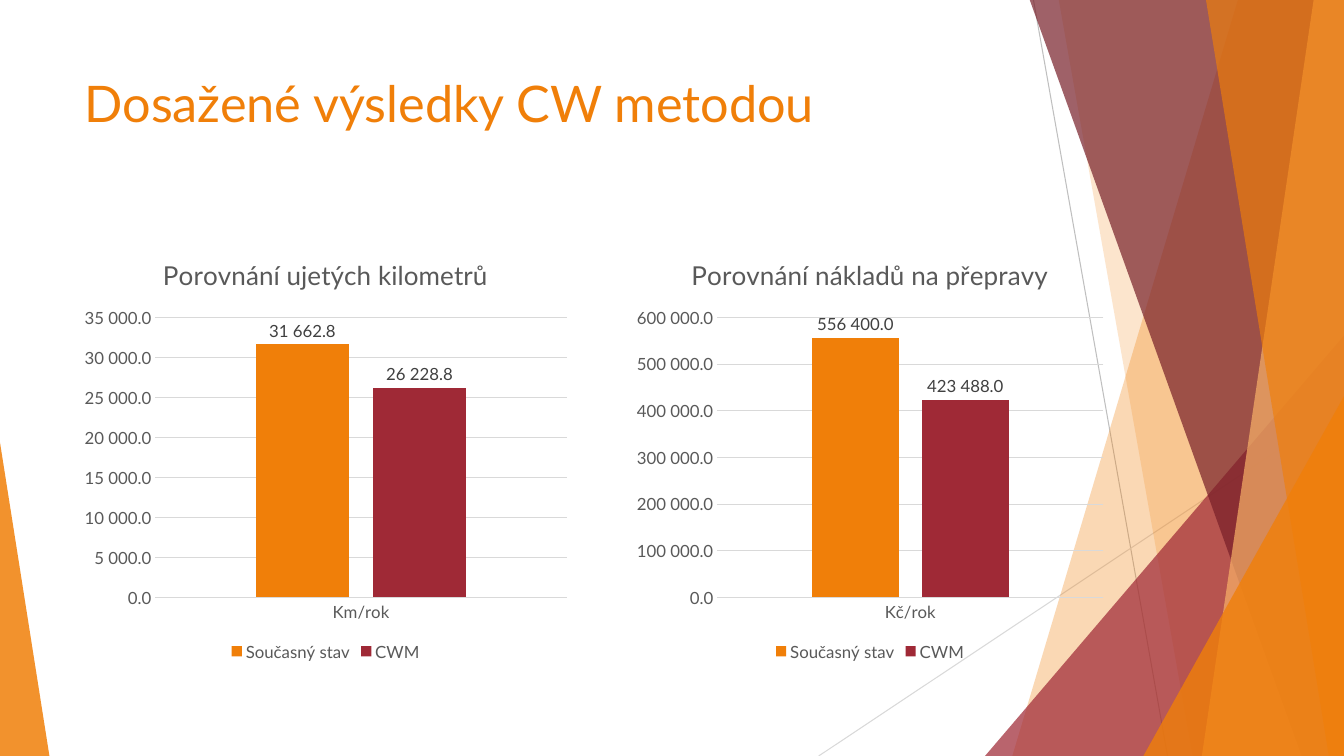
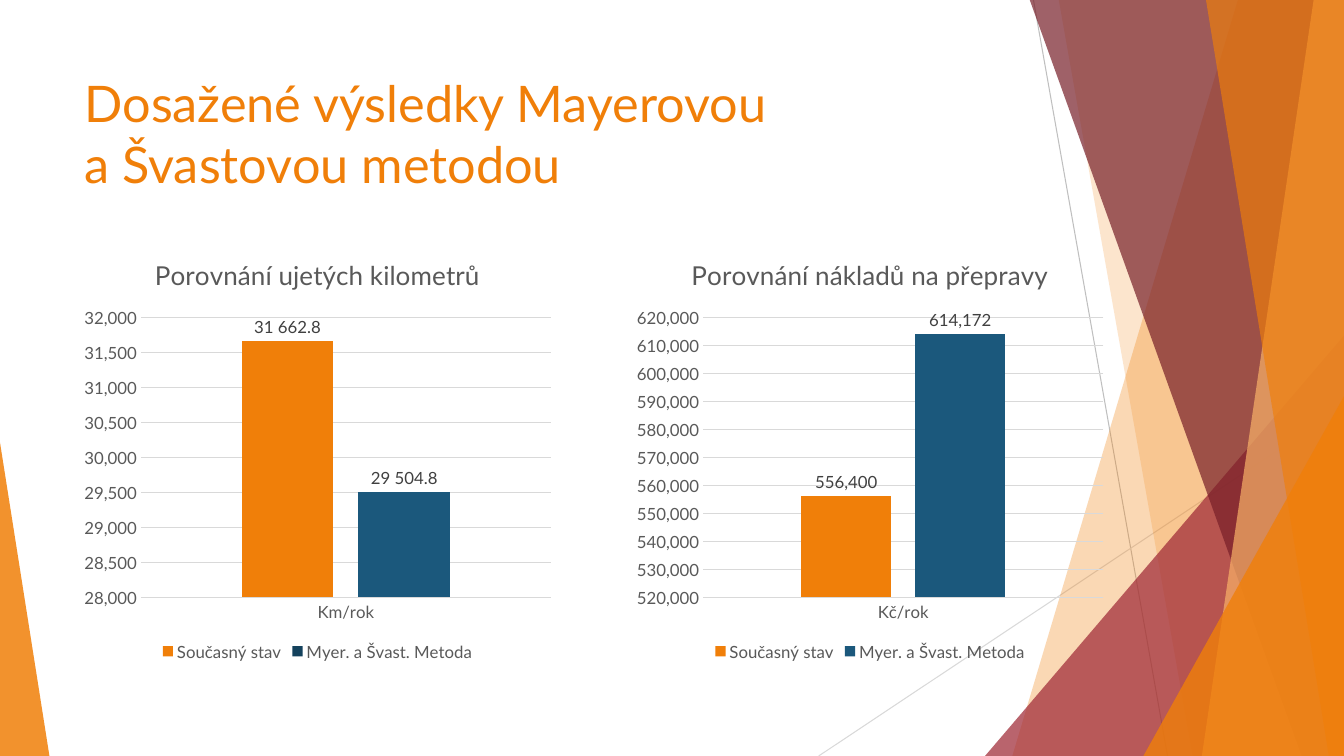
from lxml import etree
from pptx import Presentation
from pptx.chart.data import CategoryChartData
from pptx.dml.color import RGBColor
from pptx.enum.chart import XL_CHART_TYPE, XL_LABEL_POSITION, XL_LEGEND_POSITION, XL_TICK_MARK
from pptx.enum.shapes import MSO_CONNECTOR, MSO_SHAPE
from pptx.enum.text import MSO_ANCHOR
from pptx.oxml.ns import qn
from pptx.util import Inches, Pt

COLUMN_CLUSTERED = XL_CHART_TYPE.COLUMN_CLUSTERED
OUTSIDE_END = XL_LABEL_POSITION.OUTSIDE_END
LEGEND_BOTTOM = XL_LEGEND_POSITION.BOTTOM
NO_TICK = XL_TICK_MARK.NONE
STRAIGHT = MSO_CONNECTOR.STRAIGHT
TRIANGLE = MSO_SHAPE.ISOSCELES_TRIANGLE
ANCHOR_TOP = MSO_ANCHOR.TOP

ORANGE = RGBColor(0xF0, 0x7F, 0x09)
PALE_ORANGE = RGBColor(0xF9, 0xB2, 0x68)
RED = RGBColor(0x9F, 0x29, 0x36)
DARK_RED = RGBColor(0x77, 0x1F, 0x28)
BLUE = RGBColor(0x1B, 0x58, 0x7C)
DARK_BLUE = RGBColor(0x14, 0x42, 0x5D)
BLACK = RGBColor(0, 0, 0)
TEXT_GRAY = RGBColor(0x59, 0x59, 0x59)
LABEL_GRAY = RGBColor(0x40, 0x40, 0x40)
LINE_GRAY = RGBColor(0xBF, 0xBF, 0xBF)
LIGHT_GRAY = RGBColor(0xD9, 0xD9, 0xD9)

FONT = "Lato"
SLIDE_WIDTH, SLIDE_HEIGHT = 13.33, 7.5
CHART_TOP, CHART_HEIGHT = 2.36, 4.24
LEFT_CHART, RIGHT_CHART = 0.74, 6.22
SPACED = "#\\ ##0.0"
COMMA = "#,##0"
CURRENT_STATE = "Současný stav"
MAYER_METHOD = "Myer. a Švast. Metoda"
KILOMETRES = "Porovnání ujetých kilometrů"
COSTS = "Porovnání nákladů na přepravy"


def style_font(font, size, color):
    font.name = FONT
    font.size = Pt(size)
    font.bold = False
    font.color.rgb = color


def add_text(slide, text, left, top, width, height, *, size, color, anchor=ANCHOR_TOP):
    box = slide.shapes.add_textbox(Inches(left), Inches(top), Inches(width), Inches(height))
    frame = box.text_frame
    frame.word_wrap = True
    frame.vertical_anchor = anchor
    paragraph = frame.paragraphs[0]
    for index, line in enumerate(text.split("\n")):
        if index:
            paragraph.add_line_break()
        run = paragraph.add_run()
        run.text = line
        style_font(run.font, size, color)


def paint(shape, color, opacity):
    """Fill without outline or shadow; opacity is a percentage."""
    shape.shadow.inherit = False
    shape.line.fill.background()
    shape.fill.solid()
    shape.fill.fore_color.rgb = color
    color_element = next(shape.fill._xPr.iter(qn("a:srgbClr")))
    etree.SubElement(color_element, qn("a:alpha")).set("val", str(opacity * 1000))


def add_line(slide, start, end, color):
    line = slide.shapes.add_connector(STRAIGHT, *(Inches(value) for value in start + end))
    line.line.color.rgb = color
    line.line.width = Pt(0.75)
    etree.SubElement(line._element.spPr, qn("a:effectLst"))


def add_band(slide, top_x, bottom_x, color, opacity):
    """Band from a slanted left edge to the right edge of the slide."""
    top = Inches(-0.01)
    right, bottom = Inches(SLIDE_WIDTH), Inches(SLIDE_HEIGHT)
    builder = slide.shapes.build_freeform(Inches(top_x), top)
    builder.add_line_segments([(right, top), (right, bottom), (Inches(bottom_x), bottom)])
    paint(builder.convert_to_shape(), color, opacity)


def add_sheared_band(slide, top_x, bottom_x, color, opacity):
    add_band(slide, top_x, bottom_x, color, opacity)


def add_triangle(slide, left, top, width, apex, color, opacity):
    """Right triangle standing on the bottom edge of the slide."""
    triangle = slide.shapes.add_shape(
        TRIANGLE, Inches(left), Inches(top), Inches(width), Inches(SLIDE_HEIGHT - top))
    triangle.adjustments[0] = apex
    paint(triangle, color, opacity)


def add_decoration(slide):
    add_line(slide, (10.25, 0), (11.58, SLIDE_HEIGHT), LINE_GRAY)
    add_line(slide, (SLIDE_WIDTH, 4.03), (8.12, SLIDE_HEIGHT), LIGHT_GRAY)
    add_band(slide, 12.28, 10.04, ORANGE, 30)
    add_band(slide, 10.5, 11.83, ORANGE, 20)
    add_triangle(slide, 9.77, 3.33, 3.56, 1, RED, 72)
    add_band(slide, 10.21, 12.91, DARK_RED, 70)
    add_band(slide, 13.03, 11.92, PALE_ORANGE, 70)
    add_band(slide, 11.96, 13.18, ORANGE, 65)
    add_triangle(slide, 11.34, 3.93, 1.99, 1, ORANGE, 80)
    add_triangle(slide, 0, 4.39, 0.49, 0, ORANGE, 85)


def style_axes(chart, scale, number_format):
    category_axis, value_axis = chart.category_axis, chart.value_axis
    for axis in (category_axis, value_axis):
        axis.major_tick_mark = axis.minor_tick_mark = NO_TICK
        style_font(axis.tick_labels.font, 12, TEXT_GRAY)
    value_axis.minimum_scale, value_axis.maximum_scale, value_axis.major_unit = scale
    value_axis.tick_labels.number_format = number_format
    value_axis.tick_labels.number_format_is_linked = False
    value_axis.format.line.fill.background()
    value_axis.has_major_gridlines = True
    for line in (category_axis.format.line, value_axis.major_gridlines.format.line):
        line.color.rgb = LIGHT_GRAY
        line.width = Pt(0.75)


def style_series(series, color, number_format):
    series.format.fill.solid()
    series.format.fill.fore_color.rgb = color
    series.invert_if_negative = False
    labels = series.data_labels
    labels.show_value = True
    labels.position = OUTSIDE_END
    labels.number_format = number_format
    labels.number_format_is_linked = False
    style_font(labels.font, 12, LABEL_GRAY)


def add_column_chart(slide, title, category, series_rows, *, left, scale,
                     axis_format, label_format, width=4.82):
    """series_rows holds (name, value, colour); scale is (minimum, maximum, step)."""
    data = CategoryChartData()
    data.categories = [category]
    for name, value, _ in series_rows:
        data.add_series(name, [value])
    chart = slide.shapes.add_chart(
        COLUMN_CLUSTERED, Inches(left), Inches(CHART_TOP), Inches(width),
        Inches(CHART_HEIGHT), data).chart
    style_font(chart.font, 10, BLACK)

    chart.has_title = True
    run = chart.chart_title.text_frame.paragraphs[0].add_run()
    run.text = title
    style_font(run.font, 18.6, TEXT_GRAY)
    chart.chart_title.include_in_layout = False

    chart.has_legend = True
    chart.legend.position = LEGEND_BOTTOM
    chart.legend.include_in_layout = False
    style_font(chart.legend.font, 12, TEXT_GRAY)

    style_axes(chart, scale, axis_format)
    plot = chart.plots[0]
    plot.vary_by_categories = False
    plot.gap_width = 219
    plot.overlap = -27
    for series, (_, _, color) in zip(plot.series, series_rows):
        style_series(series, color, label_format)
    return chart


def add_result_slide(presentation, title):
    slide = presentation.slides.add_slide(presentation.slide_layouts[6])
    add_decoration(slide)
    add_text(slide, title, 0.74, 0.67, 9.4, 1.44, size=36, color=ORANGE)
    return slide


def add_cw_slide(presentation):
    slide = add_result_slide(presentation, "Dosažené výsledky CW metodou")
    add_column_chart(
        slide, KILOMETRES, "Km/rok",
        [(CURRENT_STATE, 31662.8, ORANGE), ("CWM", 26228.8, RED)],
        left=LEFT_CHART, width=4.98, scale=(0, 35000, 5000),
        axis_format=SPACED, label_format=SPACED)
    add_column_chart(
        slide, COSTS, "Kč/rok",
        [(CURRENT_STATE, 556400, ORANGE), ("CWM", 423488, RED)],
        left=RIGHT_CHART, scale=(0, 600000, 100000),
        axis_format=SPACED, label_format=SPACED)


def add_mayer_slide(presentation):
    slide = add_result_slide(presentation, "Dosažené výsledky Mayerovou\na Švastovou metodou")
    kilometre_chart = add_column_chart(
        slide, KILOMETRES, "Km/rok",
        [(CURRENT_STATE, 31662.8, ORANGE), (MAYER_METHOD, 29504.8, DARK_BLUE)],
        left=LEFT_CHART, scale=(28000, 32000, 500),
        axis_format=COMMA, label_format=SPACED)
    mayer_column = kilometre_chart.plots[0].series[1].points[0]
    mayer_column.format.fill.solid()
    mayer_column.format.fill.fore_color.rgb = BLUE
    add_column_chart(
        slide, COSTS, "Kč/rok",
        [(CURRENT_STATE, 556400, ORANGE), (MAYER_METHOD, 614172, BLUE)],
        left=RIGHT_CHART, scale=(520000, 620000, 10000),
        axis_format=COMMA, label_format=COMMA)


def main():
    presentation = Presentation()
    presentation.slide_width = Inches(SLIDE_WIDTH)
    presentation.slide_height = Inches(SLIDE_HEIGHT)
    add_cw_slide(presentation)
    add_mayer_slide(presentation)
    presentation.save("out.pptx")


if __name__ == "__main__":
    main()
